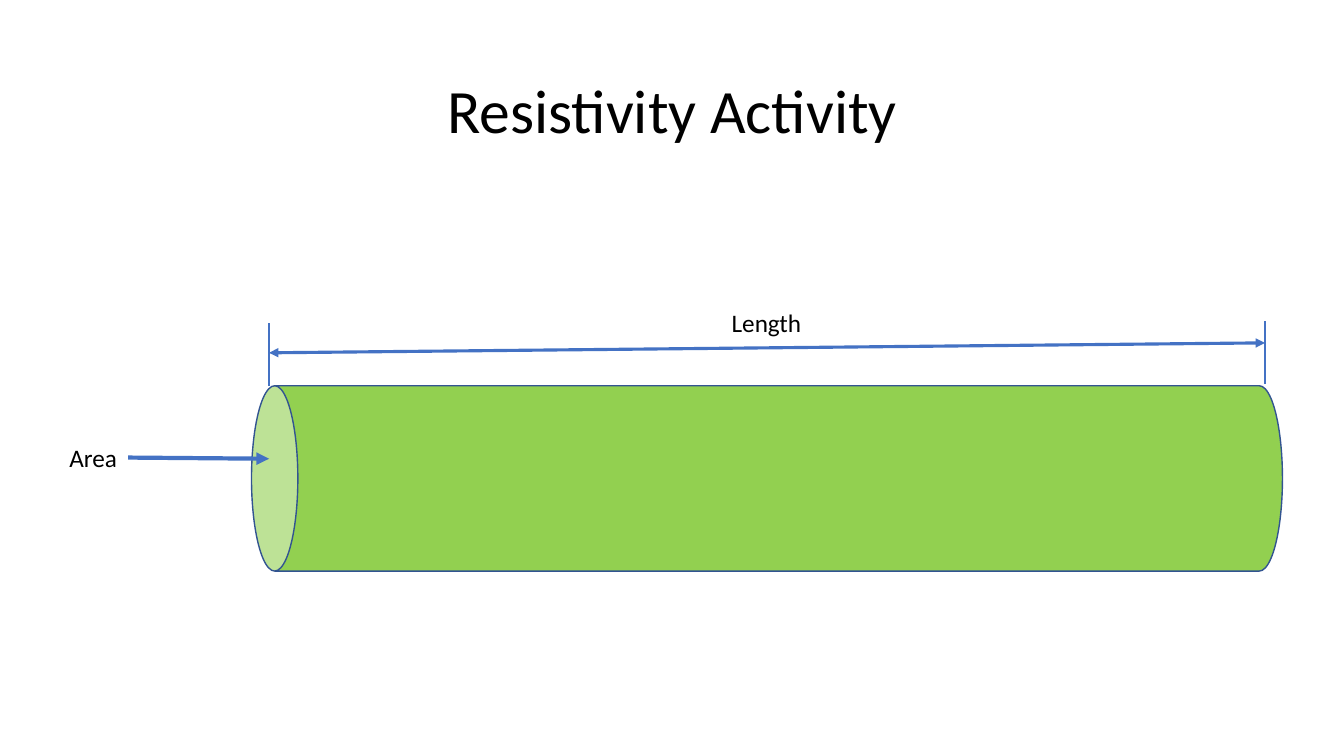
"""Draw a cylinder with its length and end area marked."""
from lxml import etree
from pptx import Presentation
from pptx.dml.color import RGBColor
from pptx.enum.shapes import MSO_CONNECTOR, MSO_SHAPE
from pptx.enum.text import MSO_ANCHOR, MSO_AUTO_SIZE, PP_ALIGN
from pptx.oxml.ns import qn
from pptx.util import Cm, Pt

CAN = MSO_SHAPE.CAN
LINE = MSO_CONNECTOR.STRAIGHT
MID = MSO_ANCHOR.MIDDLE
TOP = MSO_ANCHOR.TOP
CENTER = PP_ALIGN.CENTER
LEFT = PP_ALIGN.LEFT
GROW = MSO_AUTO_SIZE.SHAPE_TO_FIT_TEXT
FIXED = MSO_AUTO_SIZE.NONE

SIZE = (33.87, 19.05)
BLUE = "4472C4"
BAR = {"box": (6.34, 9.72, 25.98, 4.67), "fill": "92D050", "edge": "325491"}
NEAR, FAR = 6.78, 31.88
TICK = 1.6

HEAD = {"word_wrap": True, "auto_size": FIXED, "vertical_anchor": MID}
NOTE = {"word_wrap": False, "auto_size": GROW, "vertical_anchor": TOP}
TEXTS = [
    ("Resistivity Activity", (2.34, 1.02, 29.21, 3.68), 44, HEAD,
     {"alignment": CENTER, "line_spacing": 0.9}),
    ("Area", (1.5, 11.02, 1.73, 1.02), 18, NOTE, {"alignment": LEFT}),
    ("Length", (18.19, 7.62, 2.29, 1.02), 18, NOTE, {"alignment": LEFT}),
]
LINES = [
    ((3.23, 11.56), (NEAR, 11.56), 3, ["tailEnd"], "Area"),
    ((NEAR, 8.89), (FAR, 8.64), 2.25, ["headEnd", "tailEnd"], None),
    ((NEAR, 9.73), (NEAR, 9.73 - TICK), 1, [], None),
    ((FAR, 9.68), (FAR, 9.68 - TICK), 1, [], None),
]


def hue(code):
    return RGBColor.from_string(code)


def put(item, form):
    for key, val in form.items():
        setattr(item, key, val)


def add_text(slide, words, box, size, frame, para):
    shape = slide.shapes.add_textbox(*map(Cm, box))
    put(shape.text_frame, frame)
    line = shape.text_frame.paragraphs[0]
    put(line, para)
    run = line.add_run()
    run.text = words
    put(run.font, {"size": Pt(size), "name": "Calibri"})
    run.font.color.rgb = hue("000000")
    return shape


def add_bar(slide):
    left, top, wide, high = BAR["box"]
    shift = (wide - high) / 2
    bar = slide.shapes.add_shape(
        CAN, Cm(left + shift), Cm(top - shift), Cm(high), Cm(wide))
    bar.rotation = 270
    bar.shadow.inherit = False
    bar.fill.solid()
    bar.fill.fore_color.rgb = hue(BAR["fill"])
    bar.line.color.rgb = hue(BAR["edge"])
    bar.line.width = Pt(1)


def add_line(slide, start, end, width, tips, source):
    line = slide.shapes.add_connector(LINE, *map(Cm, start + end))
    if source is not None:
        line.begin_connect(source, 3)
    line.line.color.rgb = hue(BLUE)
    line.line.width = Pt(width)
    props = line._element.spPr
    for tip in tips:
        etree.SubElement(props.find(qn("a:ln")), qn("a:" + tip), type="triangle")
    etree.SubElement(props, qn("a:effectLst"))


def main():
    deck = Presentation()
    deck.slide_width, deck.slide_height = map(Cm, SIZE)
    slide = deck.slides.add_slide(deck.slide_layouts[6])
    add_bar(slide)
    notes = {row[0]: add_text(slide, *row) for row in TEXTS}
    for start, end, width, tips, name in LINES:
        add_line(slide, start, end, width, tips, notes.get(name))
    deck.save("out.pptx")


if __name__ == "__main__":
    main()
